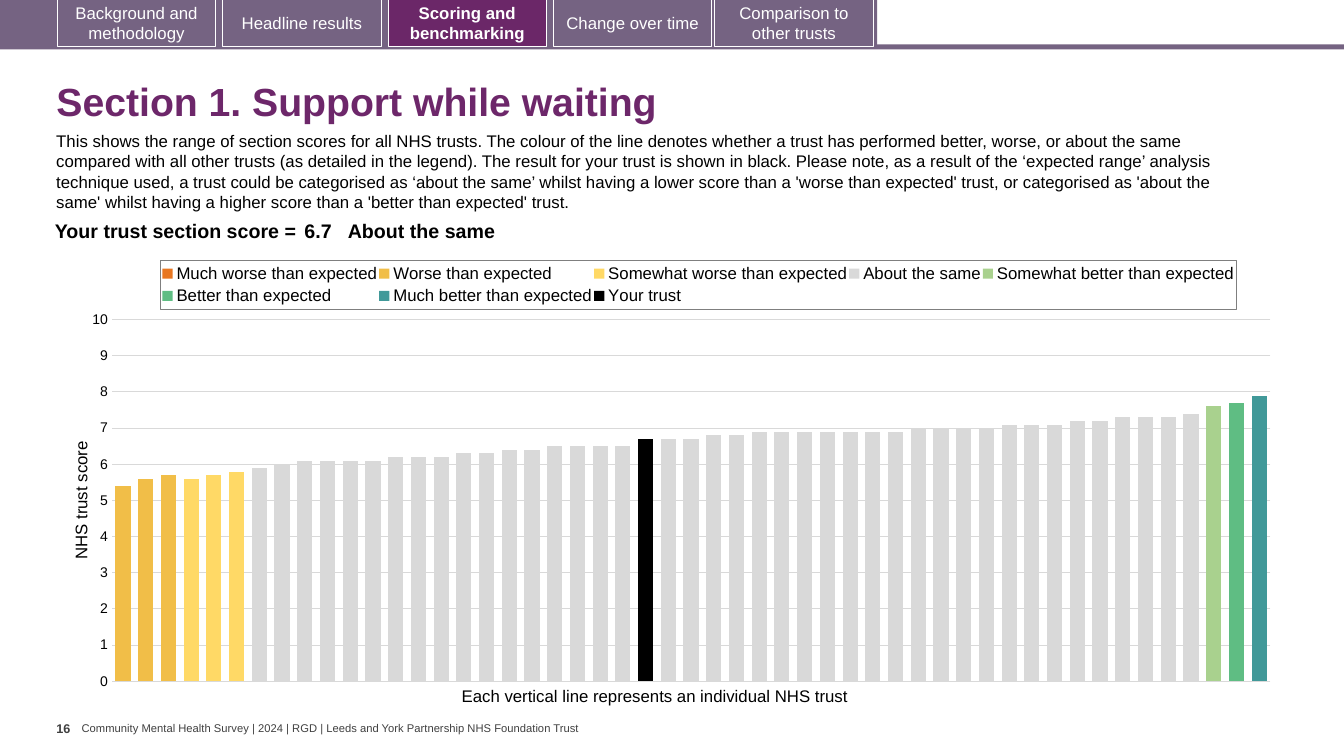
from copy import deepcopy

from pptx import Presentation
from pptx.chart.data import CategoryChartData
from pptx.dml.color import RGBColor
from pptx.enum.chart import XL_CHART_TYPE as ChartType
from pptx.enum.chart import XL_LEGEND_POSITION as LegendPosition
from pptx.enum.chart import XL_TICK_LABEL_POSITION as LabelPosition
from pptx.enum.chart import XL_TICK_MARK as TickMark
from pptx.enum.shapes import MSO_SHAPE as Preset
from pptx.enum.text import MSO_ANCHOR as Anchor
from pptx.enum.text import MSO_AUTO_SIZE as AutoSize
from pptx.enum.text import PP_ALIGN as Align
from pptx.oxml import parse_xml
from pptx.oxml.ns import nsdecls, qn
from pptx.util import Inches, Pt

COLORS = {
    "band": "756382", "active": "6B2768", "title": "6D276A", "white": "FFFFFF",
    "black": "000000", "footer": "404040", "grid": "D9D9D9", "border": "7F7F7F",
}
TABS = [
    (0.57, "Background and methodology"),
    (2.21, "Headline results"),
    (3.85, "Scoring and benchmarking"),
    (5.49, "Change over time"),
    (7.09, "Comparison to other trusts"),
]
ACTIVE_TAB = "Scoring and benchmarking"
INTRO = (
    "This shows the range of section scores for all NHS trusts. The colour of the line denotes "
    "whether a trust has performed better, worse, or about the same compared with all other trusts "
    "(as detailed in the legend). The result for your trust is shown in black. Please note, as a "
    "result of the ‘expected range’ analysis technique used, a trust could be categorised as "
    "‘about the same’ whilst having a lower score than a 'worse than expected' trust, or categorised "
    "as 'about the same' whilst having a higher score than a 'better than expected' trust."
)
FOOTER = "Community Mental Health Survey | 2024 | RGD | Leeds and York Partnership NHS Foundation Trust"
TRUST_COUNT = 51
ABOUT_THE_SAME = [
    5.9, 6, 6.1, 6.1, 6.1, 6.1, 6.2, 6.2, 6.2, 6.3, 6.3, 6.4, 6.4, 6.5, 6.5, 6.5, 6.5, 6.7, 6.7, 6.7, 6.8,
    6.8, 6.9, 6.9, 6.9, 6.9, 6.9, 6.9, 6.9, 7, 7, 7, 7, 7.1, 7.1, 7.1, 7.2, 7.2, 7.3, 7.3, 7.3, 7.4,
]
SCORE_BANDS = [
    ("Much worse than expected", "E87722", 0, []),
    ("Worse than expected", "F1BE48", 0, [5.4, 5.6, 5.7]),
    ("Somewhat worse than expected", "FFD966", 3, [5.6, 5.7, 5.8]),
    ("About the same", "D9D9D9", 6, ABOUT_THE_SAME),
    ("Somewhat better than expected", "A9D18E", 48, [7.6]),
    ("Better than expected", "5FBD83", 49, [7.7]),
    ("Much better than expected", "419999", 50, [7.9]),
    ("Your trust", "000000", 23, [6.7]),
]


def rgb(name):
    """Return the named colour."""
    return RGBColor.from_string(COLORS[name])


def style_font(font, size, color="black", bold=False):
    """Set the face, size, colour and weight of a font."""
    font.name, font.size, font.bold = "Arial", Pt(size), bold
    font.color.rgb = rgb(color)


def add_box(slide, place, fill, line=None):
    """Add a filled rectangle, with an outline if one is named."""
    shape = slide.shapes.add_shape(Preset.RECTANGLE, *map(Inches, place))
    shape.shadow.inherit = False
    shape.fill.solid()
    shape.fill.fore_color.rgb = rgb(fill)
    if line:
        shape.line.color.rgb = rgb(line)
        shape.line.width = Pt(0.75)
    else:
        shape.line.fill.background()
    return shape


def add_tab(slide, left, text):
    """Add one navigation tab."""
    active = text == ACTIVE_TAB
    shape = add_box(slide, (left, -0.01, 1.57, 0.47), "active" if active else "band", "white")
    frame = shape.text_frame
    frame.text = text
    frame.word_wrap = True
    frame.vertical_anchor = Anchor.MIDDLE
    frame.paragraphs[0].alignment = Align.CENTER
    style_font(frame.paragraphs[0].runs[0].font, 12, "white", active)


def add_text(slide, place, text, size, color="black", bold=False, wrap=False, insets=(0.1, 0.05)):
    """Add a text box with one paragraph."""
    frame = slide.shapes.add_textbox(*map(Inches, place)).text_frame
    frame.text = text
    frame.word_wrap = wrap
    frame.margin_left = frame.margin_right = Inches(insets[0])
    frame.margin_top = frame.margin_bottom = Inches(insets[1])
    style_font(frame.paragraphs[0].runs[0].font, size, color, bold)
    return frame


def set_title(slide, text):
    """Place and format the title placeholder."""
    title = slide.shapes.title
    title.left, title.top, title.width, title.height = map(Inches, (0.46, 0.67, 12.49, 0.72))
    frame = title.text_frame
    frame.text = text
    frame.auto_size = AutoSize.NONE
    frame.vertical_anchor = Anchor.MIDDLE
    paragraph = frame.paragraphs[0]
    paragraph.alignment = Align.LEFT
    paragraph.line_spacing = 0.9
    style_font(paragraph.runs[0].font, 28, "title", True)


def add_score_table(slide):
    """Add the one-row table with the trust's section score."""
    table = slide.shapes.add_table(1, 3, *map(Inches, (0.35, 2.15, 11.69, 0.31))).table
    table.first_row = table.horz_banding = False
    columns = [
        (2.63, "Your trust section score =", Align.RIGHT, 0.04),
        (0.47, "6.7", Align.LEFT, 0.04),
        (8.59, "About the same", Align.LEFT, 0),
    ]
    for index, (width, text, alignment, side) in enumerate(columns):
        table.columns[index].width = Inches(width)
        cell = table.cell(0, index)
        cell.fill.background()
        cell.text = text
        cell.margin_left = cell.margin_right = Inches(side)
        cell.margin_top = cell.margin_bottom = Inches(0.04)
        paragraph = cell.text_frame.paragraphs[0]
        paragraph.alignment = alignment
        style_font(paragraph.runs[0].font, 14, "black", True)


def make_layout(x, y, width, height, inner=False):
    """Build a manual chart layout from fractions of the chart area."""
    target = '<c:layoutTarget val="inner"/>' if inner else ""
    return parse_xml(
        f'<c:layout {nsdecls("c")}><c:manualLayout>{target}'
        f'<c:xMode val="edge"/><c:yMode val="edge"/><c:x val="{x}"/><c:y val="{y}"/>'
        f'<c:w val="{width}"/><c:h val="{height}"/></c:manualLayout></c:layout>'
    )


def move_last_series_to_right_axis(chart):
    """Give the last series its own bar group and an unlabelled right axis."""
    bars = chart.plots[0]._element
    category, value = chart.category_axis._element, chart.value_axis._element
    right_bars, right_category, right_value = map(deepcopy, (bars, category, value))
    bars.remove(bars.findall(qn("c:ser"))[-1])
    for series in right_bars.findall(qn("c:ser"))[:-1]:
        right_bars.remove(series)
    ids = ("5001", "5002")
    for element, axis_id in zip(right_bars.findall(qn("c:axId")), ids):
        element.set("val", axis_id)
    for axis, own, other in ((right_category, *ids), (right_value, *reversed(ids))):
        axis.find(qn("c:axId")).set("val", own)
        axis.find(qn("c:crossAx")).set("val", other)
    right_value.remove(right_value.find(qn("c:majorGridlines")))
    for tag, setting in (("axPos", "r"), ("tickLblPos", "none"), ("crosses", "max")):
        right_value.find(qn(f"c:{tag}")).set("val", setting)
    bars.addnext(right_bars)
    value.addnext(right_category)
    right_category.addnext(right_value)


def format_legend(chart):
    """Place the bordered legend above the bars."""
    chart.has_legend = True
    legend = chart.legend
    legend.position = LegendPosition.TOP
    legend.include_in_layout = False
    style_font(legend.font, 12)
    element = legend._element
    old_layout = element.find(qn("c:layout"))
    if old_layout is not None:
        element.remove(old_layout)
    element.find(qn("c:legendPos")).addnext(make_layout(0.076, 0.025, 0.878, 0.11))
    element.find(qn("c:txPr")).addprevious(parse_xml(
        f'<c:spPr {nsdecls("c", "a")}><a:ln w="9525"><a:solidFill>'
        f'<a:srgbClr val="{COLORS["border"]}"/></a:solidFill></a:ln></c:spPr>'
    ))


def add_score_chart(slide):
    """Add the column chart of every trust's score."""
    data = CategoryChartData()
    data.categories = [str(number) for number in range(1, TRUST_COUNT + 1)]
    for name, _, start, scores in SCORE_BANDS:
        data.add_series(name, [None] * start + scores + [None] * (TRUST_COUNT - start - len(scores)))
    place = map(Inches, (0.67, 2.47, 12.15, 4.44))
    chart = slide.shapes.add_chart(ChartType.COLUMN_CLUSTERED, *place, data).chart
    chart.has_title = False
    chart.font.name, chart.font.size = "Calibri", Pt(10)
    plot = chart.plots[0]
    plot.gap_width, plot.overlap, plot.vary_by_categories = 50, 100, False
    for series, (_, color, _, _) in zip(plot.series, SCORE_BANDS):
        series.format.fill.solid()
        series.format.fill.fore_color.rgb = RGBColor.from_string(color)
    chart.category_axis.visible = False
    axis = chart.value_axis
    axis.minimum_scale, axis.maximum_scale, axis.major_unit = 0, 10, 1
    axis.format.line.fill.background()
    axis.tick_label_position = LabelPosition.NEXT_TO_AXIS
    axis.major_tick_mark = TickMark.OUTSIDE
    move_last_series_to_right_axis(chart)
    axis.major_tick_mark = TickMark.NONE
    axis.major_gridlines.format.line.color.rgb = rgb("grid")
    axis.major_gridlines.format.line.width = Pt(0.75)
    style_font(axis.tick_labels.font, 10)
    axis.axis_title.text_frame.text = "NHS trust score"
    style_font(axis.axis_title.text_frame.paragraphs[0].runs[0].font, 12)
    format_legend(chart)
    area = plot._element.getparent()
    for old_layout in area.findall(qn("c:layout")):
        area.remove(old_layout)
    area.insert(0, make_layout(0.036, 0.158, 0.946, 0.808, inner=True))


def main():
    """Build the slide and save it."""
    presentation = Presentation()
    presentation.slide_width, presentation.slide_height = Inches(13.33), Inches(7.5)
    slide = presentation.slides.add_slide(presentation.slide_layouts[5])
    footer = add_text(slide, (0.81, 7.16, 5.01, 0.13), FOOTER, 8, "footer", insets=(0, 0))
    footer.vertical_anchor = Anchor.MIDDLE
    add_box(slide, (0, 0.44, 13.33, 0.05), "band")
    add_box(slide, (0, 0, 8.7, 0.47), "band")
    for left, text in TABS:
        add_tab(slide, left, text)
    set_title(slide, "Section 1. Support while waiting")
    add_text(slide, (0.46, 1.25, 12.13, 0.91), INTRO, 12, wrap=True)
    add_text(slide, (0.56, 7.1, 0.25, 0.4), "16", 9, "footer", True, insets=(0, 0.05))
    add_text(slide, (4.48, 6.75, 4.11, 0.3), "Each vertical line represents an individual NHS trust", 12)
    add_score_chart(slide)
    add_score_table(slide)
    presentation.save("out.pptx")


if __name__ == "__main__":
    main()
